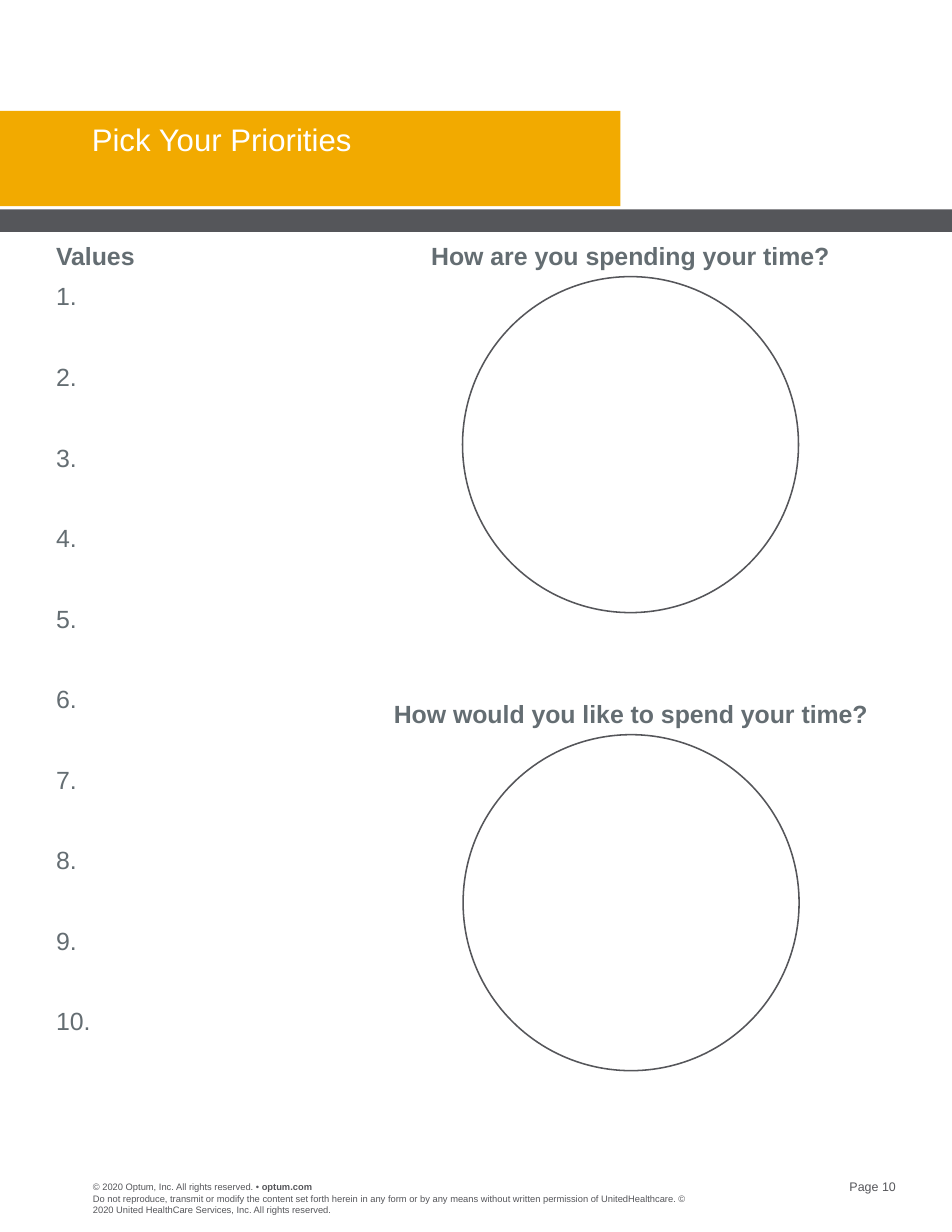
from pptx import Presentation
from pptx.dml.color import RGBColor
from pptx.enum.shapes import MSO_SHAPE
from pptx.enum.text import PP_ALIGN
from pptx.util import Inches, Pt

FONT = "Arial"
GOLD = RGBColor(0xF2, 0xAA, 0x00)
DARK = RGBColor(0x55, 0x56, 0x5A)
GREY = RGBColor(0x64, 0x6D, 0x72)
WHITE = RGBColor(0xFF, 0xFF, 0xFF)


def add_shape(s, kind, left, top, width, height, fill, line=None):
    sp = s.shapes.add_shape(kind, Inches(left), Inches(top), Inches(width), Inches(height))
    sp.shadow.inherit = False
    sp.fill.solid()
    sp.fill.fore_color.rgb = fill
    if line is None:
        sp.line.fill.background()
    else:
        sp.line.color.rgb = line
        sp.line.width = Pt(1)
    return sp


def add_text_frame(s, left, top, width, height):
    tb = s.shapes.add_textbox(Inches(left), Inches(top), Inches(width), Inches(height))
    tf = tb.text_frame
    tf.word_wrap = True
    tf.margin_left = tf.margin_top = tf.margin_right = tf.margin_bottom = 0
    return tf


def add_run(p, text, size, color, bold=False):
    r = p.add_run()
    r.text = text
    r.font.name = FONT
    r.font.size = Pt(size)
    r.font.bold = bold
    r.font.color.rgb = color


def add_banner(s, left, top, width):
    add_shape(s, MSO_SHAPE.RECTANGLE, left, top, 5.54, 0.85, GOLD)
    add_shape(s, MSO_SHAPE.RECTANGLE, left, top + 0.88, width, 0.2, DARK)
    p = add_text_frame(s, left + 0.82, top + 0.12, 4.5, 0.3).paragraphs[0]
    p.line_spacing = 0.9
    add_run(p, "Pick Your Priorities", 20, WHITE)


def add_values(s, left, top, width, height):
    """Heading over ten numbers, each with a line of room to write in."""
    tf = add_text_frame(s, left, top, width, height)
    p = tf.paragraphs[0]
    p.space_after = Pt(6.7)
    add_run(p, "Values", 16, GREY, bold=True)
    for number in range(1, 11):
        p = tf.add_paragraph()
        p.space_after = Pt(32.6)
        add_run(p, f"{number}.", 16, GREY)


def add_time_circle(s, left, top, width, question, diameter=3):
    """Question centred over an empty circle to be divided up."""
    add_shape(s, MSO_SHAPE.OVAL, left + (width - diameter) / 2, top + 0.32,
              diameter, diameter, WHITE, DARK)
    p = add_text_frame(s, left, top, width, 0.27).paragraphs[0]
    p.alignment = PP_ALIGN.CENTER
    add_run(p, question, 16, GREY, bold=True)


def add_footer(s, left, top, right):
    p = add_text_frame(s, left, top, 2, 0.1).paragraphs[0]
    add_run(p, "© 2020 Optum, Inc. All rights reserved. • ", 6, DARK)
    add_run(p, "optum.com", 6, DARK, bold=True)
    p = add_text_frame(s, left, top + 0.1, 5.3, 0.2).paragraphs[0]
    add_run(p, "Do not reproduce, transmit or modify the content set forth herein in any form "
               "or by any means without written permission of UnitedHealthcare. "
               "© 2020 United HealthCare Services, Inc. All rights reserved.", 6, DARK)
    p = add_text_frame(s, right - 0.81, top - 0.02, 0.81, 0.13).paragraphs[0]
    p.alignment = PP_ALIGN.RIGHT
    add_run(p, "Page 10", 8, DARK)


def main():
    prs = Presentation()
    prs.slide_width = Inches(8.5)
    prs.slide_height = Inches(11)
    s = prs.slides.add_slide(prs.slide_layouts[6])
    add_banner(s, 0, 0.99, 8.5)
    add_values(s, 0.5, 2.15, 0.89, 7.25)
    add_time_circle(s, 3.6, 2.15, 4.06, "How are you spending your time?")
    add_time_circle(s, 3.06, 6.24, 5.15, "How would you like to spend your time?")
    add_footer(s, 0.83, 10.55, 8)
    prs.save("out.pptx")


if __name__ == "__main__":
    main()
